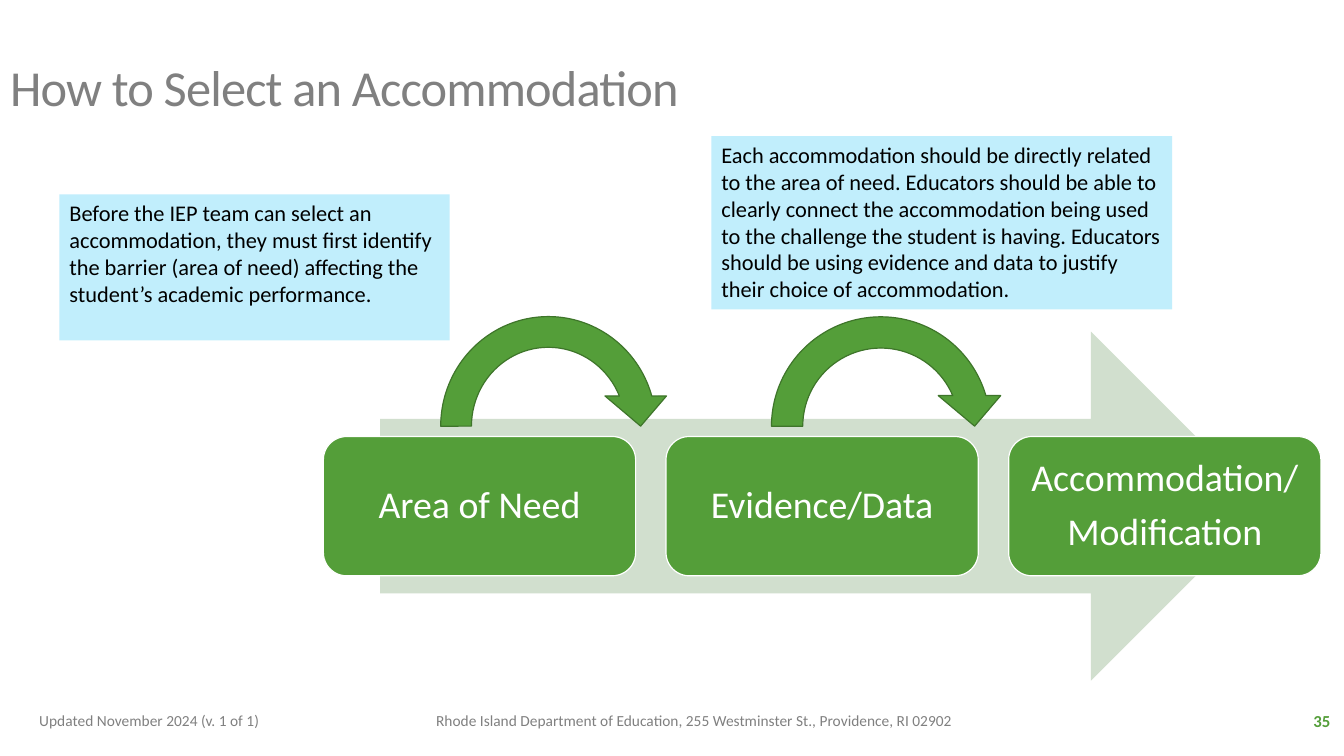
from pptx import Presentation
from pptx import util as u
from pptx.dml.color import RGBColor
from pptx.enum import shapes, text

GREEN, GREY, SKY = "549E39", "808080", "C1EEFC"
KIND = shapes.MSO_SHAPE
ANCHOR = text.MSO_ANCHOR
ALIGN = text.PP_ALIGN


def color(value):
    return RGBColor.from_string(value)


def write(tf, content, size, fill, bold=False, align=ALIGN.LEFT, anchor=ANCHOR.MIDDLE,
          line=None, after=None, tracking=None):
    tf.word_wrap = True
    tf.auto_size = text.MSO_AUTO_SIZE.NONE
    tf.vertical_anchor = anchor
    for i, words in enumerate(content.split("\n")):
        p = tf.add_paragraph() if i else tf.paragraphs[0]
        p.alignment = align
        if line:
            p.line_spacing = line
        if after:
            p.space_after = u.Pt(after)
        r = p.add_run()
        r.text = words
        r.font.name = "Calibri"
        r.font.size = u.Pt(size)
        r.font.bold = bold
        r.font.color.rgb = color(fill)
        if tracking:
            r.font._element.set("spc", str(tracking))


def add_shape(s, kind, box, fill, line=None):
    sp = s.shapes.add_shape(kind, *map(u.Cm, box))
    sp.shadow.inherit = False
    sp.fill.solid()
    sp.fill.fore_color.rgb = color(fill)
    if line:
        sp.line.color.rgb = color(line)
        sp.line.width = u.Pt(0.85)
    else:
        sp.line.fill.background()
    return sp


def add_title(s, box, content):
    sp = s.shapes.title
    sp.left, sp.top, sp.width, sp.height = map(u.Cm, box)
    write(sp.text_frame, content, 36, GREY, line=0.9, tracking=-60)


def add_footer(s, box):
    left, top, width, height = box
    parts = [
        (0, 7.62, "Updated November 2024 (v. 1 of 1)", 11, GREY, False, ALIGN.LEFT),
        (10, 16.41, "Rhode Island Department of Education, 255 Westminster St., "
         "Providence, RI 02902", 11, GREY, False, ALIGN.LEFT),
        (width - 4.24, 4.24, "35", 12, GREEN, True, ALIGN.RIGHT),
    ]
    for dx, w, content, size, fill, bold, align in parts:
        sp = s.shapes.add_textbox(*map(u.Cm, (left + dx, top, w, height)))
        write(sp.text_frame, content, size, fill, bold, align)


def add_process(s, box, steps):
    left, top, width, height = box
    add_shape(s, KIND.RIGHT_ARROW,
              (left + 1.43, top + 0.77, width - 2.83, height - 0.77), "D1DFCE")
    step_w, step_h = 7.87, 3.51
    pitch = (width - step_w) / (len(steps) - 1)
    for i, step in enumerate(steps):
        sp = add_shape(s, KIND.ROUNDED_RECTANGLE,
                       (left + i * pitch, top + 3.41, step_w, step_h), GREEN, "FFFFFF")
        write(sp.text_frame, step, 27, "FFFFFF", align=ALIGN.CENTER, line=0.9, after=9.45)
    for dx, w in ((2.57, 6.2), (10.9, 6.3)):
        add_shape(s, KIND.CIRCULAR_ARROW, (left + dx, top, w, 6.3), GREEN, "3E752A")


def add_note(s, box, content):
    sp = add_shape(s, KIND.RECTANGLE, box, SKY)
    write(sp.text_frame, content, 16, "000000", anchor=ANCHOR.TOP)


def main():
    prs = Presentation()
    prs.slide_width, prs.slide_height = u.Cm(33.87), u.Cm(19.05)
    s = prs.slides.add_slide(prs.slide_layouts[5])
    add_title(s, (0, 0.61, 21.08, 3.33), "How to Select an Accommodation")
    add_footer(s, (0.74, 17.65, 33.04, 1.02))
    add_process(s, (8.15, 7.59, 25.14, 9.56),
                ["Area of Need", "Evidence/Data", "Accommodation/\nModification"])
    add_note(s, (17.93, 3.43, 11.61, 4.37),
             "Each accommodation should be directly related to the area of need. "
             "Educators should be able to clearly connect the accommodation being used "
             "to the challenge the student is having. Educators should be using evidence "
             "and data to justify their choice of accommodation.")
    add_note(s, (1.5, 4.9, 9.83, 3.68),
             "Before the IEP team can select an accommodation, they must first identify "
             "the barrier (area of need) affecting the student’s academic performance.")
    prs.save("out.pptx")


if __name__ == "__main__":
    main()
